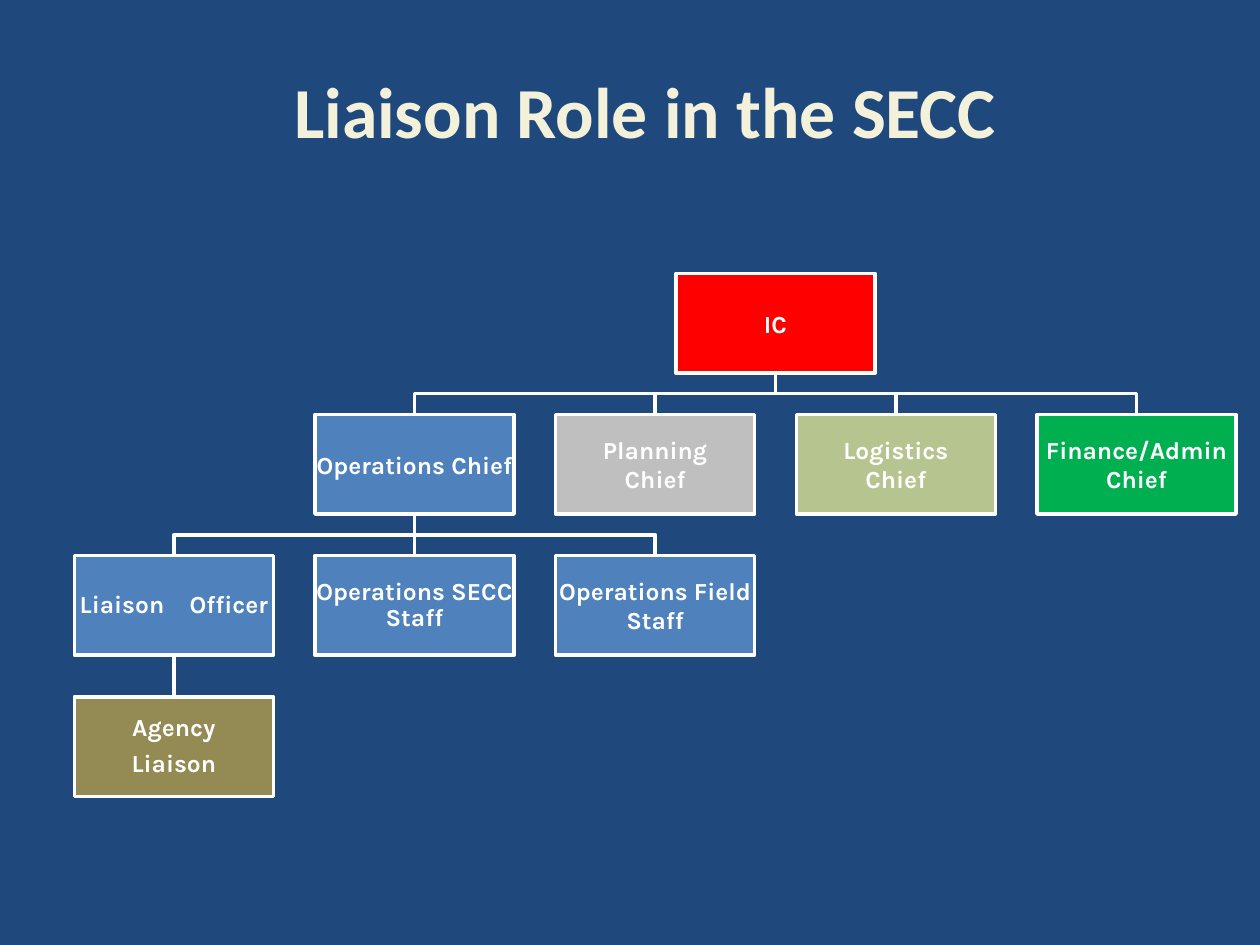
from lxml import etree
from pptx import Presentation
from pptx.dml.color import RGBColor
from pptx.enum import shapes, text
from pptx.oxml.ns import qn
from pptx.util import Inches, Pt

NAVY = RGBColor(0x1F, 0x49, 0x7D)
CREAM = RGBColor(0xF4, 0xF1, 0xDA)
WHITE = RGBColor(0xFF, 0xFF, 0xFF)
RED = RGBColor(0xFF, 0x00, 0x00)
BLUE = RGBColor(0x4F, 0x81, 0xBD)
OLIVE = RGBColor(0x94, 0x8A, 0x54)
GREY = RGBColor(0xBF, 0xBF, 0xBF)
YELLOW = RGBColor(0xFF, 0xFF, 0x99)
GREEN = RGBColor(0x00, 0xB0, 0x50)

LEFT, TOP = 0.59, 2.17
COLUMN_STEP, ROW_STEP = 1.91, 1.12
BOX_W, BOX_H = 1.58, 0.79
WORD_GAP = "1080"  # extra space between words, in hundredths of a point

# name: (column, row, fill, lines, tight line spacing)
POSTS = {
    "ic": (2.5, 0, RED, ["IC"], False),
    "operations": (1, 1, BLUE, ["Operations Chief"], False),
    "planning": (2, 1, GREY, ["Planning", "Chief"], False),
    "logistics": (3, 1, YELLOW, ["Logistics", "Chief"], False),
    "finance": (4, 1, GREEN, ["Finance/Admin Chief"], False),
    "liaison": (0, 2, BLUE, ["Liaison Officer"], True),
    "secc_staff": (1, 2, BLUE, ["Operations SECC Staff"], True),
    "field_staff": (2, 2, BLUE, ["Operations Field Staff"], False),
    "agency": (0, 3, OLIVE, ["Agency", "Liaison"], True),
}
REPORTS = {
    "ic": ["finance", "logistics", "planning", "operations"],
    "operations": ["field_staff", "secc_staff", "liaison"],
    "liaison": ["agency"],
}


def corner(post):
    """Left and top of a post's box, in inches."""
    column, row = POSTS[post][:2]
    return LEFT + column * COLUMN_STEP, TOP + row * ROW_STEP


def set_font(font, name, size, color):
    values = {"name": name, "size": Pt(size), "bold": True}
    for attribute, value in values.items():
        setattr(font, attribute, value)
    font.color.rgb = color


prs = Presentation()
prs.slide_width, prs.slide_height = Inches(10), Inches(7.5)
slide = prs.slides.add_slide(prs.slide_layouts[5])
slide.background.fill.solid()
slide.background.fill.fore_color.rgb = NAVY

title = slide.shapes.title
title.left, title.top = Inches(0.58), Inches(0.25)
title.width, title.height = Inches(9.09), Inches(1.25)
title.text_frame.text = "Liaison Role in the SECC"
title.text_frame.vertical_anchor = text.MSO_ANCHOR.MIDDLE
heading = title.text_frame.paragraphs[0]
heading.alignment = text.PP_ALIGN.CENTER
set_font(heading.runs[0].font, "Calibri", 41, CREAM)

# Reporting lines, behind the boxes
for chief, staff in REPORTS.items():
    chief_left, chief_top = corner(chief)
    start_x = Inches(chief_left + BOX_W / 2)
    start_y = Inches(chief_top + BOX_H)
    for member in staff:
        member_left, member_top = corner(member)
        end_x, end_y = Inches(member_left + BOX_W / 2), Inches(member_top)
        if start_x == end_x:
            link = slide.shapes.add_connector(
                shapes.MSO_CONNECTOR.STRAIGHT, start_x, start_y, end_x, end_y)
            etree.SubElement(link._element.spPr, qn("a:effectLst"))
        else:
            middle_y = (start_y + end_y) // 2
            outline = slide.shapes.build_freeform(start_x, start_y)
            outline.add_line_segments(
                [(start_x, middle_y), (end_x, middle_y), (end_x, end_y)], close=False)
            link = outline.convert_to_shape()
            link.fill.background()
            link.shadow.inherit = False
        link.line.color.rgb = WHITE
        link.line.width = Pt(2)

for post, (column, row, color, lines, tight) in POSTS.items():
    left, top = corner(post)
    box = slide.shapes.add_shape(
        shapes.MSO_SHAPE.RECTANGLE,
        Inches(left), Inches(top), Inches(BOX_W), Inches(BOX_H))
    box.shadow.inherit = False
    box.fill.solid()
    box.fill.fore_color.rgb = color
    box.line.color.rgb = WHITE
    box.line.width = Pt(2)
    if post == "logistics":
        tint = box._element.spPr.find(qn("a:solidFill"))[0]
        etree.SubElement(tint, qn("a:alpha"), val="68000")

    frame = box.text_frame
    frame.word_wrap = True
    frame.vertical_anchor = text.MSO_ANCHOR.MIDDLE
    for side in ("left", "top", "right", "bottom"):
        setattr(frame, f"margin_{side}", Inches(0.01))
    for index, line in enumerate(lines):
        paragraph = frame.paragraphs[0] if index == 0 else frame.add_paragraph()
        paragraph.alignment = text.PP_ALIGN.CENTER
        if tight:
            paragraph.line_spacing = 0.9
            paragraph.space_after = Pt(5)
        pieces = ["Liaison", " ", "Officer"] if post == "liaison" else [line]
        for piece in pieces:
            run = paragraph.add_run()
            run.text = piece
            set_font(run.font, "Karla", 14, WHITE)
            if piece == " ":
                run._r.get_or_add_rPr().set("spc", WORD_GAP)

prs.save("out.pptx")
